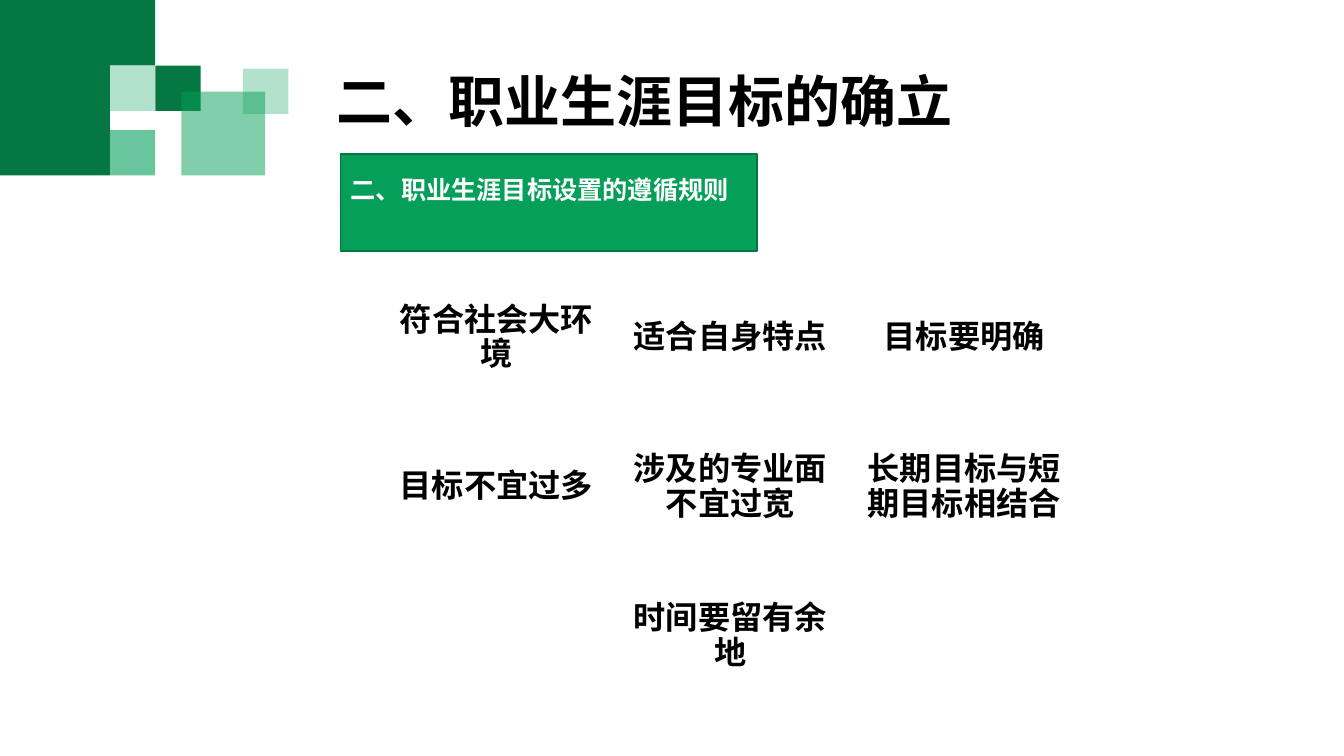
from dataclasses import dataclass

from lxml.etree import SubElement
from pptx import Presentation
from pptx.dml.color import RGBColor
from pptx.enum.shapes import MSO_SHAPE
from pptx.enum.text import MSO_ANCHOR, MSO_AUTO_SIZE, PP_ALIGN
from pptx.oxml.ns import qn
from pptx.shapes.autoshape import Shape
from pptx.slide import Slide
from pptx.text.text import TextFrame
from pptx.util import Emu, Pt

PX = 9144  # 100 px to the inch
COLOURS = {
    "dark": "047743",
    "green": "059F59",
    "outline": "047642",
    "white": "FFFFFF",
    "black": "000000",
}
LATIN_FONT = "Calibri"
CJK_FONT = "Noto Sans CJK SC"


@dataclass(frozen=True)
class Box:
    left: int
    top: int
    width: int
    height: int


@dataclass(frozen=True)
class Block:
    box: Box
    colour: str
    opacity: int = 100


@dataclass(frozen=True)
class Span:
    text: str
    font: str = LATIN_FONT


@dataclass(frozen=True)
class TextStyle:
    size: int
    colour: str
    line_spacing: float
    alignment: PP_ALIGN = PP_ALIGN.LEFT
    anchor: MSO_ANCHOR = MSO_ANCHOR.TOP
    space_before: int = 0
    side_margin: int = 10


@dataclass(frozen=True)
class Rule:
    text: str
    column: int
    row: int


CORNER_BLOCKS = [
    Block(Box(0, 64, 109, 110), "dark"),  # overlaps the next block to avoid a seam
    Block(Box(0, 0, 154, 65), "dark"),
    Block(Box(109, 65, 45, 45), "green", 30),
    Block(Box(154, 65, 45, 45), "dark"),
    Block(Box(109, 129, 45, 45), "green", 60),
    Block(Box(180, 91, 83, 83), "green", 50),
    Block(Box(241, 68, 45, 45), "green", 30),
]

TITLE_BOX = Box(324, 69, 734, 145)
BANNER_BOX = Box(338, 153, 413, 96)
FIRST_RULE_BOX = Box(387, 272, 211, 127)
RULE_GAP = 21

TITLE_STYLE = TextStyle(40, "black", 0.9, space_before=10)
BANNER_STYLE = TextStyle(18, "white", 1.5)
RULE_STYLE = TextStyle(
    23, "black", 0.9, PP_ALIGN.CENTER, MSO_ANCHOR.MIDDLE, side_margin=8
)

RULES = [
    Rule("符合社会大环境", 0, 0),
    Rule("适合自身特点", 1, 0),
    Rule("目标要明确", 2, 0),
    Rule("目标不宜过多", 0, 1),
    Rule("涉及的专业面不宜过宽", 1, 1),
    Rule("长期目标与短期目标相结合", 2, 1),
    Rule("时间要留有余地", 1, 2),
]


def place(shape: Shape, box: Box) -> None:
    shape.left, shape.top = Emu(box.left * PX), Emu(box.top * PX)
    shape.width, shape.height = Emu(box.width * PX), Emu(box.height * PX)


def add_block(slide: Slide, block: Block) -> Shape:
    shape = slide.shapes.add_shape(MSO_SHAPE.RECTANGLE, 0, 0, 0, 0)
    place(shape, block.box)
    shape.shadow.inherit = False
    shape.line.fill.background()
    shape.fill.solid()
    shape.fill.fore_color.rgb = RGBColor.from_string(COLOURS[block.colour])
    if block.opacity < 100:
        colour = shape.fill._xPr.find(".//" + qn("a:srgbClr"))
        SubElement(colour, qn("a:alpha"), val=str(block.opacity * 1000))
    return shape


def write(frame: TextFrame, spans: list[Span], style: TextStyle) -> None:
    frame.word_wrap = True
    frame.auto_size = MSO_AUTO_SIZE.NONE
    frame.vertical_anchor = style.anchor
    frame.margin_left = frame.margin_right = Emu(style.side_margin * PX)
    paragraph = frame.paragraphs[0]
    paragraph.alignment = style.alignment
    paragraph.line_spacing = style.line_spacing
    paragraph.space_before = Pt(style.space_before)
    for span in spans:
        run = paragraph.add_run()
        run.text = span.text
        run.font.name = span.font
        run.font.size = Pt(style.size)
        run.font.bold = True
        run.font.color.rgb = RGBColor.from_string(COLOURS[style.colour])
        latin = run.font._element.find(qn("a:latin"))
        east_asian = SubElement(run.font._element, qn("a:ea"), typeface=CJK_FONT)
        latin.addnext(east_asian)


def add_title(slide: Slide) -> None:
    title = slide.shapes.title
    place(title, TITLE_BOX)
    write(title.text_frame, [Span("二、职业生涯目标的确立")], TITLE_STYLE)


def add_banner(slide: Slide) -> None:
    banner = add_block(slide, Block(BANNER_BOX, "green"))
    banner.line.color.rgb = RGBColor.from_string(COLOURS["outline"])
    banner.line.width = Pt(1)
    spans = [Span("二、", CJK_FONT), Span("职业生涯目标设置的遵循规则")]
    write(banner.text_frame, spans, BANNER_STYLE)


def add_rule(slide: Slide, rule: Rule) -> None:
    first = FIRST_RULE_BOX
    box = Box(
        first.left + rule.column * (first.width + RULE_GAP),
        first.top + rule.row * (first.height + RULE_GAP),
        first.width,
        first.height,
    )
    tile = add_block(slide, Block(box, "white"))
    write(tile.text_frame, [Span(rule.text)], RULE_STYLE)


def main() -> None:
    presentation = Presentation()
    presentation.slide_width = Emu(1333 * PX)
    presentation.slide_height = Emu(750 * PX)
    slide = presentation.slides.add_slide(presentation.slide_layouts[5])
    for block in CORNER_BLOCKS:
        add_block(slide, block)
    add_title(slide)
    add_banner(slide)
    for rule in RULES:
        add_rule(slide, rule)
    presentation.save("out.pptx")


if __name__ == "__main__":
    main()
